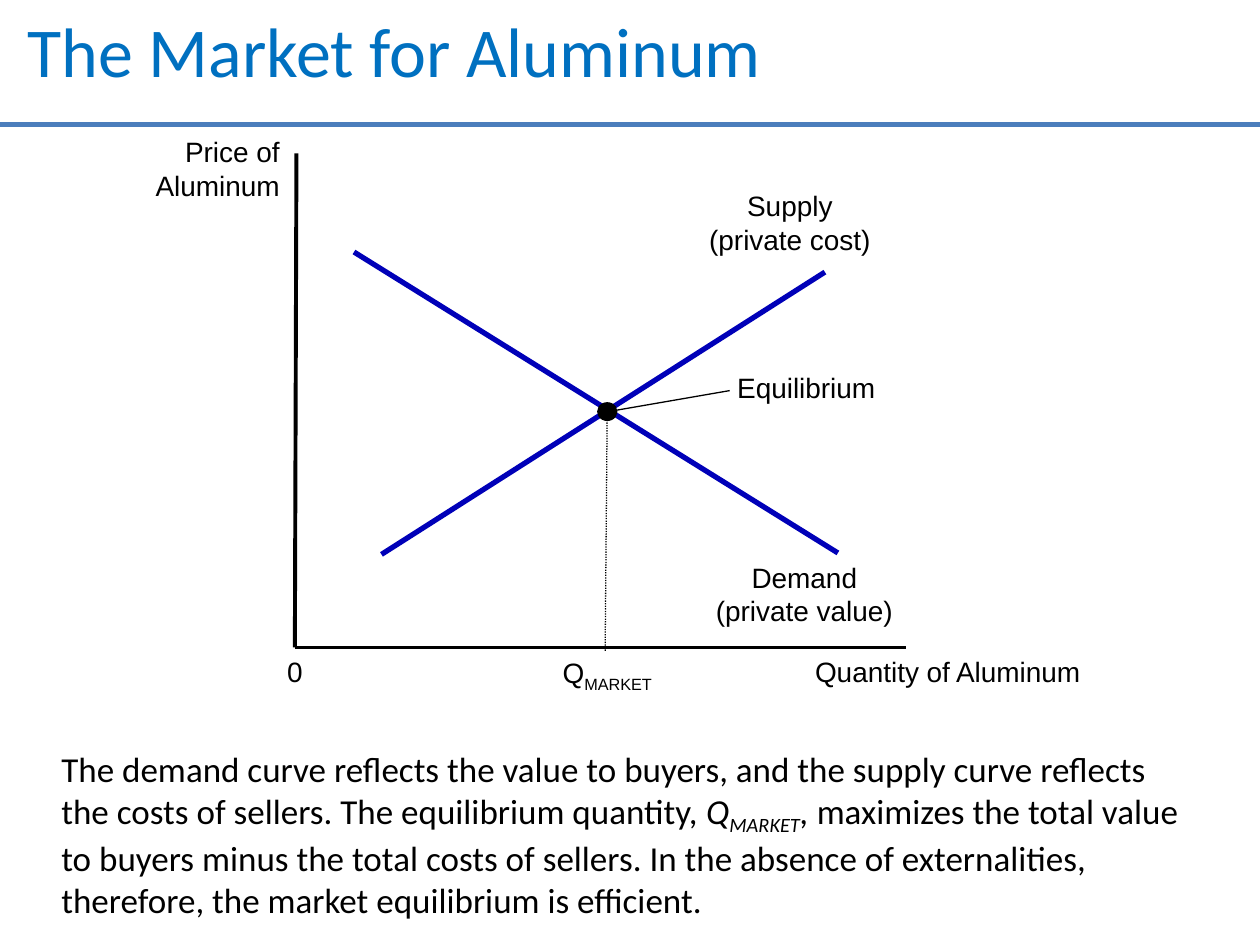
import pptx
import pptx.util
import pptx.dml.color
import pptx.enum.dml
import pptx.enum.shapes
import pptx.enum.text
import pptx.oxml.ns
import lxml.etree

Pt = pptx.util.Pt
RGB = pptx.dml.color.RGBColor
Align = pptx.enum.text.PP_ALIGN
Shape = pptx.enum.shapes.MSO_SHAPE

BLACK = RGB(0, 0, 0)
WHITE = RGB(255, 255, 255)
TITLE = RGB(0x00, 0x70, 0xC0)
RULE = RGB(0x4B, 0x7E, 0xBC)
CURVE = RGB(0x00, 0x00, 0xB8)


class Board:
    """Holds the current slide and the style of its text."""

    def __init__(self, slide, font="Arial", size=16):
        self.slide = slide
        self.font = font
        self.size = size

    def style(self, run, font, size, color=BLACK):
        run.font.name = font
        run.font.size = Pt(size)
        run.font.color.rgb = color

    def title(self, text, left, top, width, height):
        box = self.slide.shapes.title
        box.left, box.top = Pt(left), Pt(top)
        box.width, box.height = Pt(width), Pt(height)
        frame = box.text_frame
        frame.text = text
        frame.auto_size = pptx.enum.text.MSO_AUTO_SIZE.NONE
        frame.vertical_anchor = pptx.enum.text.MSO_ANCHOR.TOP
        frame.paragraphs[0].alignment = Align.LEFT
        self.style(frame.paragraphs[0].runs[0], "Calibri", 40, TITLE)

    def line(self, start, end, color=BLACK, width=2.25, dash=None):
        kind = pptx.enum.shapes.MSO_CONNECTOR.STRAIGHT
        ends = [Pt(v) for v in (*start, *end)]
        link = self.slide.shapes.add_connector(kind, *ends)
        link.line.color.rgb = color
        link.line.width = Pt(width)
        if dash:
            link.line.dash_style = dash
        props = link._element.spPr
        lxml.etree.SubElement(props, pptx.oxml.ns.qn("a:effectLst"))

    def shape(self, kind, left, top, width, height, fill):
        item = self.slide.shapes.add_shape(
            kind, Pt(left), Pt(top), Pt(width), Pt(height))
        item.shadow.inherit = False
        item.fill.solid()
        item.fill.fore_color.rgb = fill
        item.line.fill.background()

    def text(self, rows, left, top, width, height, align=Align.CENTER,
             font=None, size=None, wrap=False):
        """Each row is a list of (words, italic, lowered) runs or a string."""
        box = self.slide.shapes.add_textbox(
            Pt(left), Pt(top), Pt(width), Pt(height))
        frame = box.text_frame
        frame.word_wrap = wrap
        for i, row in enumerate(rows):
            para = frame.add_paragraph() if i else frame.paragraphs[0]
            para.alignment = align
            parts = [(row, False, False)] if isinstance(row, str) else row
            for words, slant, low in parts:
                run = para.add_run()
                run.text = words
                self.style(run, font or self.font, size or self.size)
                if slant:
                    run.font.italic = True
                if low:
                    run.font._element.set("baseline", "-25000")


def main():
    deck = pptx.Presentation()
    deck.slide_width, deck.slide_height = Pt(720), Pt(540)
    board = Board(deck.slides.add_slide(deck.slide_layouts[5]))

    # Title and rule
    board.line((0, 71.3), (720, 71.3), RULE, 3)
    board.title("The Market for Aluminum", 8.6, 0.7, 711.4, 41.8)

    # Plot area and axes
    zero = (168.5, 370)
    board.shape(Shape.RECTANGLE, 170, 93.6, 355.7, 275.8, WHITE)
    board.line((169.4, 87.6), zero)
    board.line(zero, (517.7, 370))
    board.text(["Price of", "Aluminum"], 74, 73.3, 92.9, 46,
               Align.RIGHT, wrap=True)
    board.text(["Quantity of Aluminum"], 451, 370.6, 173.5, 26.6,
               Align.RIGHT, wrap=True)
    board.text(["0"], 156.6, 370.4, 23.8, 26.6)

    # Demand and supply
    board.line((202.3, 144), (478.8, 316), CURVE, 3)
    board.text(["Demand", "(private value)"], 401.3, 316.6, 116.6, 46)
    board.line((218, 316.8), (471.4, 155.5), CURVE, 3)
    board.text(["Supply", "(private cost)"], 397.4, 104.2, 108, 46)

    # Equilibrium
    board.shape(Shape.OVAL, 341.2, 229.8, 11.6, 10.8, BLACK)
    board.line((347, 232.6), (345.8, 372), width=0.75,
               dash=pptx.enum.dml.MSO_LINE.ROUND_DOT)
    board.text([[("Q", False, False), ("MARKET", False, True)]],
               311, 370.8, 72, 26.6)
    board.text(["Equilibrium"], 413.6, 208.2, 94.3, 26.6)
    board.line((350, 234.8), (417, 223.2), width=0.75)

    # Explanation
    board.text([[
        ("The demand curve reflects the value to buyers, and the supply "
         "curve reflects the costs of sellers. The equilibrium quantity, ",
         False, False),
        ("Q", True, False),
        ("MARKET", True, True),
        (", ", True, False),
        ("maximizes the total value to buyers minus the total costs of "
         "sellers. In the absence of externalities, therefore, the market "
         "equilibrium is efficient.", False, False),
    ]], 28, 423.4, 664, 104.4, Align.LEFT, "Calibri", 20, True)

    deck.save("out.pptx")


if __name__ == "__main__":
    main()
